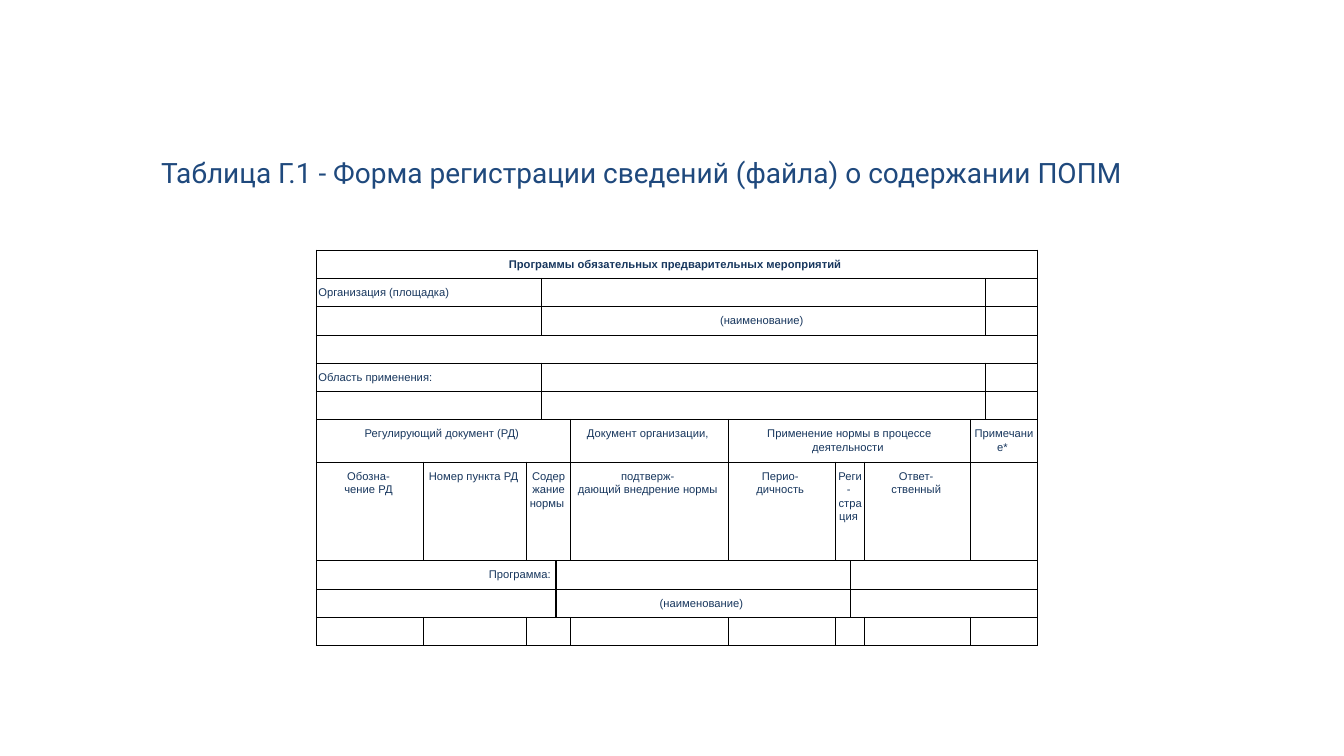
from lxml.etree import SubElement
from pptx import Presentation
from pptx.dml.color import RGBColor
from pptx.enum.text import PP_ALIGN as AL
from pptx.oxml.ns import qn
from pptx.util import Pt

TITLE = "Таблица Г.1 - Форма регистрации сведений (файла) о содержании ПОПМ"
BLUE, NAVY, BLACK = "1F497D", "17365D", "000000"
SIZE = 8

COLS = [76.7, 73.5, 10.5, 10.5, 10.5, 112.5, 76.7, 10.5, 10.5, 75.7, 10.5, 37]
ROWS = [20] * 6 + [30, 70.5] + [20] * 3

# Column spans of each kind of row
FULL, ORG, PROGRAM = [12], [3, 8, 1], [4, 4, 4]
GROUPS = [5, 1, 4, 2]
DETAIL = [1, 1, 3, 1, 1, 2, 1, 2]

# (spans, alignment of the first cell, texts); the other cells are centred
FORM = [
    (FULL, AL.CENTER, ["Программы обязательных предварительных мероприятий "]),
    (ORG, AL.LEFT, ["Организация (площадка)", "", ""]),
    (ORG, AL.LEFT, ["", "(наименование) ", ""]),
    (FULL, AL.LEFT, [""]),
    (ORG, AL.LEFT, ["Область применения:", "", ""]),
    (ORG, AL.LEFT, ["", "", ""]),
    (GROUPS, AL.CENTER, ["Регулирующий документ (РД) ", "Документ организации, ",
                         "Применение нормы в процессе деятельности ", "Примечание* "]),
    (DETAIL, AL.CENTER, ["Обозна- \nчение РД ", "Номер пункта РД ", "Содержание нормы ",
                         "подтверж- \nдающий внедрение нормы ", "Перио- \nдичность ",
                         "Реги- \nстрация ", "Ответ- \nственный ", ""]),
    (PROGRAM, AL.RIGHT, ["Программа: ", "", ""]),
    (PROGRAM, AL.RIGHT, ["", "(наименование) ", ""]),
    (DETAIL, AL.CENTER, [""] * 8),
]


def style(font, name, size, color, bold=False):
    font.name, font.size, font.bold = name, Pt(size), bold
    font.color.rgb = RGBColor.from_string(color)


def frame_cell(cell):
    """Give a cell thin black borders, no fill and narrow margins."""
    tcPr = cell._tc.get_or_add_tcPr()
    for side in "LRTB":
        ln = SubElement(tcPr, qn(f"a:ln{side}"), w=str(Pt(1)))
        fill = SubElement(ln, qn("a:solidFill"))
        SubElement(fill, qn("a:srgbClr"), val=BLACK)
    cell.fill.background()
    cell.margin_left = cell.margin_right = Pt(1.4)
    cell.margin_top = cell.margin_bottom = Pt(5)


def write_cell(cell, text, align, bold):
    cell.text_frame.text = text
    for p in cell.text_frame.paragraphs:
        p.alignment, p.line_spacing = align, 1.07
        for r in p.runs:
            style(r.font, "Arial", SIZE, NAVY, bold)


prs = Presentation()
prs.slide_width, prs.slide_height = Pt(960), Pt(540)
s = prs.slides.add_slide(prs.slide_layouts[6])

tf = s.shapes.add_textbox(Pt(108), Pt(109.5), Pt(820), Pt(353)).text_frame
tf.word_wrap = True
tf.text = TITLE
p = tf.paragraphs[0]
p.line_spacing, p.space_after = 0.94, Pt(2)
style(p.runs[0].font, "Roboto", 20, BLUE)

table = s.shapes.add_table(len(ROWS), len(COLS), Pt(226), Pt(178.7),
                           Pt(sum(COLS)), Pt(sum(ROWS))).table
table.first_row = table.horz_banding = False
for col, width in zip(table.columns, COLS):
    col.width = Pt(width)
for row, height in zip(table.rows, ROWS):
    row.height = Pt(height)
for cell in table.iter_cells():
    frame_cell(cell)

for i, (spans, first_align, texts) in enumerate(FORM):
    j = 0
    for span, text in zip(spans, texts):
        cell = table.cell(i, j)
        if span > 1:
            cell.merge(table.cell(i, j + span - 1))
        write_cell(cell, text, AL.CENTER if j else first_align, bold=i == 0)
        j += span

# Empty cells need the small size too, or their rows would grow
for cell in table.iter_cells():
    for p in cell.text_frame.paragraphs:
        if not p.runs:
            SubElement(p._p, qn("a:endParaRPr"), sz=str(SIZE * 100))

prs.save("out.pptx")
